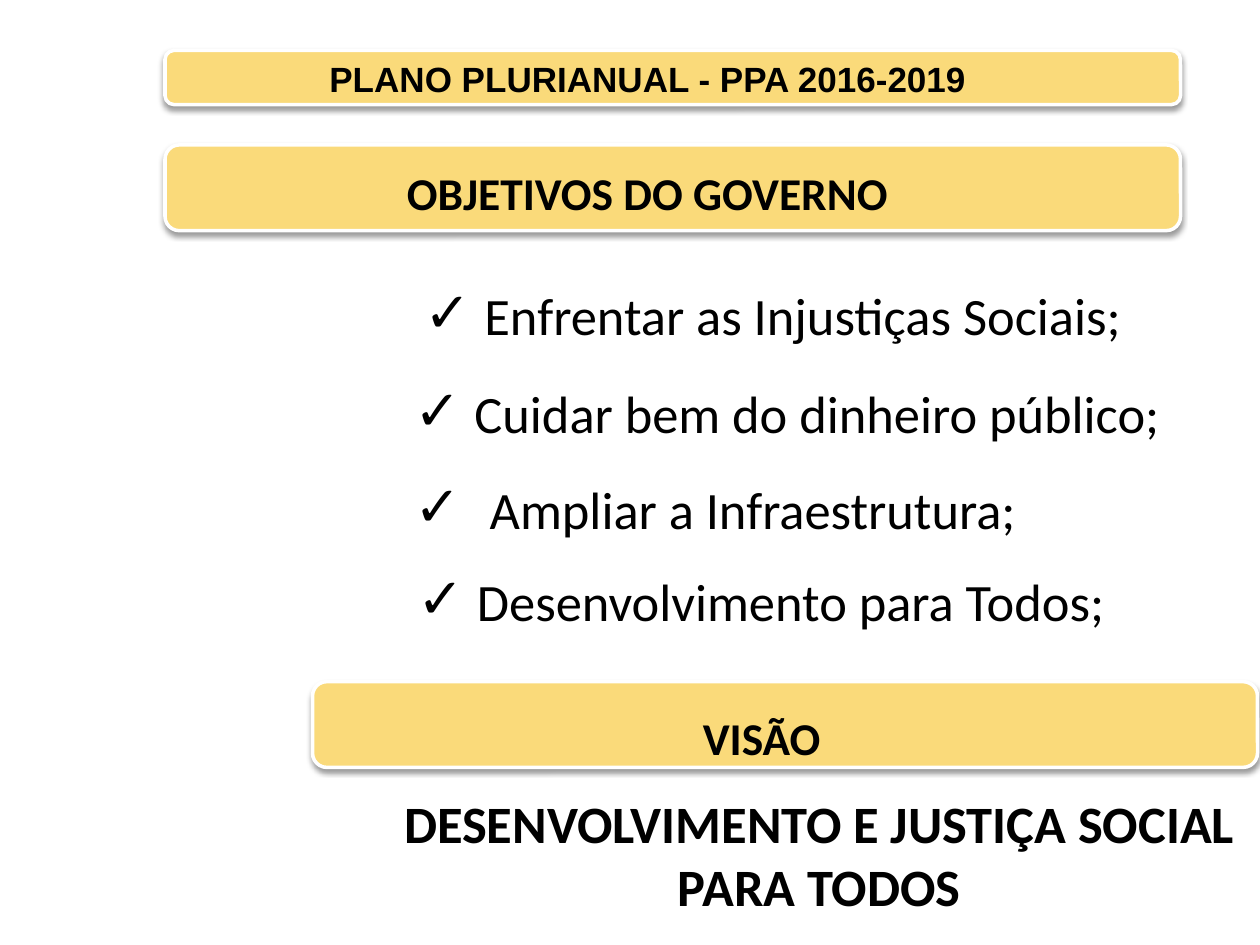
from lxml import etree
from pptx import Presentation
from pptx.dml.color import RGBColor
from pptx.enum.shapes import MSO_SHAPE
from pptx.enum.text import MSO_ANCHOR, PP_ALIGN
from pptx.oxml import parse_xml
from pptx.oxml.ns import qn
from pptx.util import Pt

ROUNDED = MSO_SHAPE.ROUNDED_RECTANGLE
TOP, MIDDLE = MSO_ANCHOR.TOP, MSO_ANCHOR.MIDDLE
CENTER = PP_ALIGN.CENTER

THEME = {
    "bar": RGBColor.from_string("FADA7A"),
    "edge": RGBColor.from_string("FFFFFF"),
    "ink": RGBColor.from_string("000000"),
    "title_font": "Arial", "body_font": "Calibri",
    "title": 20, "heading": 26, "goal": 30, "space": 32,
}

# Content: boxes are left, top, width, height in points
BANNERS = [
    dict(text="OBJETIVOS DO GOVERNO", bar=(94.3, 82.8, 580.3, 49),
         label=(99.4, 57.6, 541.4, 88.6), spacing=1.5),
    dict(text="VISÃO", bar=(178.6, 389.5, 540, 49),
         label=(183.6, 370.8, 503.3, 85), spacing=1.5),
    dict(text="PLANO PLURIANUAL - PPA 2016-2019", bar=(94.3, 28.8, 580.3, 31),
         label=(99.4, 16.6, 541.4, 56.2), font="title_font", size="title"),
]
GOAL_HEIGHT = 59.8
GOALS = [  # text, left, top, width, hanging indent
    ("Enfrentar as Injustiças Sociais;", 213.8, 136.8, 455.8, 0),
    ("Cuidar bem do dinheiro público;", 213.8, 193, 472.3, 0),
    ("Ampliar a Infraestrutura;", 151.9, 247.7, 513.4, 36),
    ("Desenvolvimento para Todos;", 206.6, 300.2, 456.5, 0),
]
VISION = ("DESENVOLVIMENTO E JUSTIÇA SOCIAL PARA TODOS", (213.8, 448.6, 509, 79.9))

SHADOW = (
    '<a:effectLst xmlns:a="http://schemas.openxmlformats.org/drawingml/2006/main">'
    '<a:outerShdw blurRad="38100" dist="25400" dir="5400000" rotWithShape="0">'
    '<a:srgbClr val="000000"><a:alpha val="40000"/></a:srgbClr>'
    '</a:outerShdw></a:effectLst>'
)


def points(box):
    return [Pt(v) for v in box]


def add_check(paragraph, hanging):
    props = paragraph._p.get_or_add_pPr()
    props.set("marL", str(Pt(hanging)))
    props.set("indent", str(-Pt(hanging)))
    etree.SubElement(props, qn("a:buFont")).set("typeface", "Arial")
    etree.SubElement(props, qn("a:buChar")).set("char", "✓")


def add_text(slide, box, text, size="goal", font="body_font", bold=False,
             spacing=None, anchor=TOP, check=False, hanging=0):
    frame = slide.shapes.add_textbox(*points(box)).text_frame
    frame.word_wrap = True
    frame.vertical_anchor = anchor
    paragraph = frame.paragraphs[0]
    paragraph.alignment = CENTER
    if check:
        add_check(paragraph, hanging)
    if spacing:
        paragraph.line_spacing = spacing
    # A larger space separates the check mark from its goal
    pieces = [(" ", "space")] if check else []
    for piece, piece_size in pieces + [(text, size)]:
        run = paragraph.add_run()
        run.text = piece
        run.font.name = THEME[font]
        run.font.size = Pt(THEME[piece_size])
        run.font.bold = bold
        run.font.color.rgb = THEME["ink"]


def add_banner(slide, text, bar, label, spacing=None, font="body_font", size="heading"):
    plate = slide.shapes.add_shape(ROUNDED, *points(bar))
    plate.fill.solid()
    plate.fill.fore_color.rgb = THEME["bar"]
    plate.line.color.rgb = THEME["edge"]
    plate.line.width = Pt(2)
    plate._element.spPr.append(parse_xml(SHADOW))
    add_text(slide, label, text, size=size, font=font, bold=True,
             spacing=spacing, anchor=MIDDLE)


def main():
    prs = Presentation()
    prs.slide_width, prs.slide_height = Pt(720), Pt(540)
    slide = prs.slides.add_slide(prs.slide_layouts[6])

    # Vision statement
    vision_text, vision_box = VISION
    add_text(slide, vision_box, vision_text, bold=True)

    # Government goals
    for goal, left, top, width, hanging in GOALS:
        add_text(slide, (left, top, width, GOAL_HEIGHT), goal,
                 spacing=1.5, check=True, hanging=hanging)

    # Title and section banners
    for banner in BANNERS:
        add_banner(slide, **banner)

    prs.save("out.pptx")


if __name__ == "__main__":
    main()
